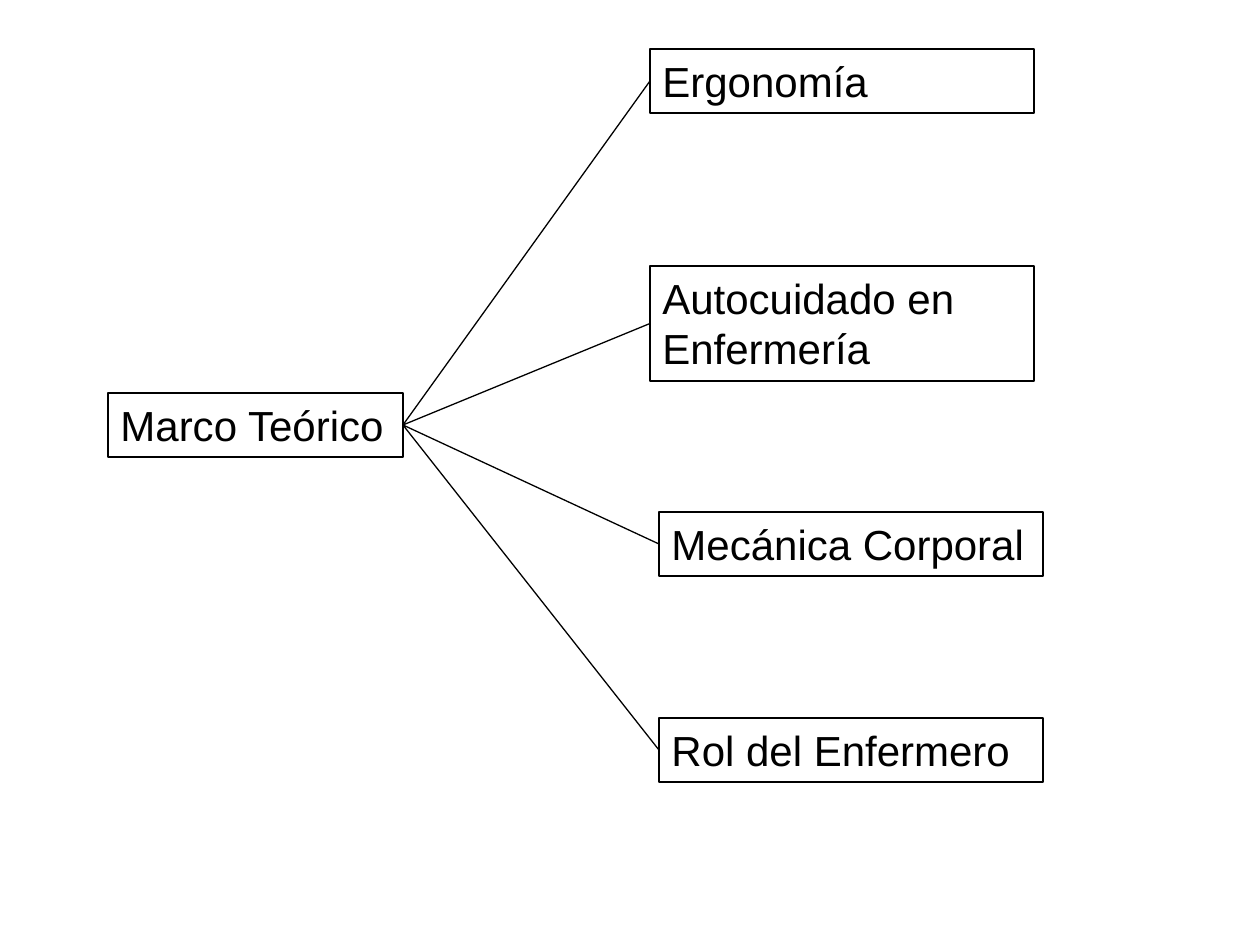
from dataclasses import dataclass

from pptx import Presentation
from pptx.dml.color import RGBColor
from pptx.enum.shapes import MSO_CONNECTOR, MSO_SHAPE
from pptx.enum.text import MSO_ANCHOR, MSO_AUTO_SIZE, PP_ALIGN
from pptx.oxml.ns import qn
from pptx.shapes.autoshape import Shape
from pptx.shapes.connector import Connector
from pptx.shapes.shapetree import SlideShapes
from pptx.util import Pt
from lxml import etree

RECT = MSO_SHAPE.RECTANGLE
STRAIGHT = MSO_CONNECTOR.STRAIGHT
TOP = MSO_ANCHOR.TOP
GROW = MSO_AUTO_SIZE.SHAPE_TO_FIT_TEXT
LEFT = PP_ALIGN.LEFT
WEST, EAST = 1, 3
SCALE = 914400 / 126
COLORS = {"ink": "000000", "paper": "FFFFFF"}


@dataclass(frozen=True)
class Box:
    text: str
    left: int
    top: int
    width: int = 384
    height: int = 64


ROOT = Box("Marco Teórico", 108, 393, 295)
TOPICS = [
    Box("Ergonomía", 650, 49),
    Box("Autocuidado en Enfermería", 650, 266, height=115),
    Box("Mecánica Corporal", 659, 512),
    Box("Rol del Enfermero", 659, 718),
]


def px(count: int) -> int:
    return round(count * SCALE)


def color(name: str) -> RGBColor:
    return RGBColor.from_string(COLORS[name])


def ink(item: Shape | Connector) -> None:
    item.line.color.rgb = color("ink")
    item.line.width = Pt(0.75)


def draw_box(shapes: SlideShapes, box: Box) -> Shape:
    shape = shapes.add_shape(
        RECT, px(box.left), px(box.top), px(box.width), px(box.height)
    )
    shape.shadow.inherit = False
    shape.fill.background()
    ink(shape)
    frame = shape.text_frame
    frame.word_wrap = True
    frame.auto_size = GROW
    frame.vertical_anchor = TOP
    frame.text = box.text
    line = frame.paragraphs[0]
    line.alignment = LEFT
    line.font.name = "Arial"
    line.font.size = Pt(24)
    line.font.color.rgb = color("ink")
    return shape


def link(shapes: SlideShapes, start: Shape, end: Shape) -> None:
    line = shapes.add_connector(STRAIGHT, 0, 0, 0, 0)
    line.begin_connect(start, EAST)
    line.end_connect(end, WEST)
    ink(line)
    etree.SubElement(line._element.spPr, qn("a:effectLst"))


def main() -> None:
    deck = Presentation()
    deck.slide_width, deck.slide_height = px(1260), px(945)
    slide = deck.slides.add_slide(deck.slide_layouts[6])
    slide.background.fill.solid()
    slide.background.fill.fore_color.rgb = color("paper")
    root = draw_box(slide.shapes, ROOT)
    topics = [draw_box(slide.shapes, box) for box in TOPICS]
    for topic in topics:
        link(slide.shapes, root, topic)
    deck.save("out.pptx")


if __name__ == "__main__":
    main()
